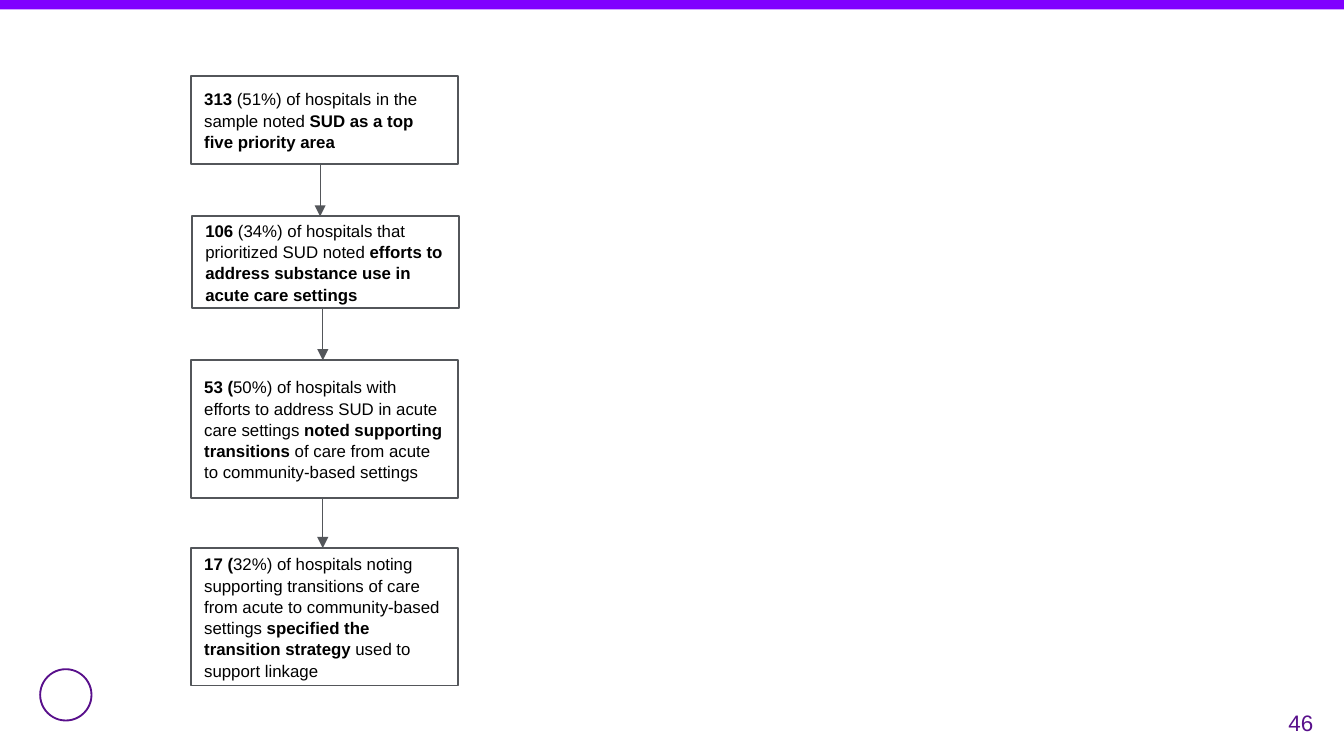
import pptx
import pptx.dml.color
import pptx.enum.shapes
import pptx.enum.text
import pptx.oxml
import pptx.oxml.ns
import pptx.util
from dataclasses import dataclass
from typing import Optional

Cm = pptx.util.Cm
Pt = pptx.util.Pt
RGBColor = pptx.dml.color.RGBColor
MSO_SHAPE = pptx.enum.shapes.MSO_SHAPE
MSO_ANCHOR = pptx.enum.text.MSO_ANCHOR
PP_ALIGN = pptx.enum.text.PP_ALIGN

BAR_VIOLET = RGBColor(0x80, 0x00, 0xFF)
DEEP_PURPLE = RGBColor(0x58, 0x0F, 0x8B)
OUTLINE_GREY = RGBColor(0x53, 0x56, 0x5A)
BLACK = RGBColor(0x00, 0x00, 0x00)

BOX_WIDTH = 5.05


@dataclass
class Step:
    """A flowchart box; its runs alternate bold and regular, bold first."""
    left: float
    top: float
    height: float
    runs: tuple[str, ...]
    arrow_x: Optional[float] = None  # arrow leading to the next box

    @property
    def bottom(self) -> float:
        return self.top + self.height


STEPS = [
    Step(3.61, 1.43, 1.67,
         ("313", " (51%) of hospitals in the sample noted ",
          "SUD as a top five priority area"), 6.05),
    Step(3.63, 4.09, 1.73,
         ("106", " (34%) of hospitals that prioritized SUD noted ",
          "efforts to address substance use in acute care settings"), 6.1),
    Step(3.61, 6.81, 2.6,
         ("53 (", "50%) of hospitals with efforts to address SUD in acute care settings ",
          "noted supporting transitions ",
          "of care from acute to community-based settings"), 6.1),
    Step(3.61, 10.36, 2.6,
         ("17 (", "32%) of hospitals noting supporting transitions of care "
          "from acute to community-based settings ",
          "specified the transition strategy", " used to support linkage")),
]


def add_plain_shape(slide, kind, left: float, top: float, width: float, height: float,
                    fill: Optional[RGBColor] = None, line: Optional[RGBColor] = None):
    shape = slide.shapes.add_shape(kind, Cm(left), Cm(top), Cm(width), Cm(height))
    shape.shadow.inherit = False
    if fill is None:
        shape.fill.background()
    else:
        shape.fill.solid()
        shape.fill.fore_color.rgb = fill
    if line is None:
        shape.line.fill.background()
    else:
        shape.line.color.rgb = line
        shape.line.width = Pt(1)
    return shape


def add_run(paragraph, text: str, size: float, color: RGBColor, bold: bool = False) -> None:
    run = paragraph.add_run()
    run.text = text
    font_format = {"name": "Arial", "size": Pt(size), "bold": bold}
    for attribute, value in font_format.items():
        setattr(run.font, attribute, value)
    run.font.color.rgb = color


def add_step(slide, step: Step) -> None:
    shape = add_plain_shape(slide, MSO_SHAPE.RECTANGLE, step.left, step.top,
                            BOX_WIDTH, step.height, line=OUTLINE_GREY)
    text_frame = shape.text_frame
    text_frame.word_wrap = True
    text_frame.vertical_anchor = MSO_ANCHOR.MIDDLE
    paragraph = text_frame.paragraphs[0]
    paragraph.alignment = PP_ALIGN.LEFT
    paragraph.line_spacing = 1.05
    for index, text in enumerate(step.runs):
        add_run(paragraph, text, 9, BLACK, bold=index % 2 == 0)


def add_arrow(slide, x: float, top: float, bottom: float) -> None:
    connector = slide.shapes.add_connector(
        pptx.enum.shapes.MSO_CONNECTOR.STRAIGHT, Cm(x), Cm(top), Cm(x), Cm(bottom))
    connector.line.color.rgb = OUTLINE_GREY
    connector.line.width = Pt(0.5)
    arrowhead = pptx.oxml.parse_xml(
        f'<a:tailEnd {pptx.oxml.ns.nsdecls("a")} type="triangle"/>')
    connector.line._get_or_add_ln().append(arrowhead)
    no_effects = pptx.oxml.parse_xml(f'<a:effectLst {pptx.oxml.ns.nsdecls("a")}/>')
    connector._element.spPr.append(no_effects)


def add_slide_number(slide, number: str) -> None:
    text_frame = slide.shapes.add_textbox(
        Cm(23.55), Cm(12.95), Cm(1.52), Cm(1.09 * 1.29)).text_frame
    frame_format = {"word_wrap": True, "vertical_anchor": MSO_ANCHOR.MIDDLE}
    for side in ("left", "right", "top", "bottom"):
        frame_format[f"margin_{side}"] = Cm(0.25)
    for attribute, value in frame_format.items():
        setattr(text_frame, attribute, value)
    paragraph = text_frame.paragraphs[0]
    paragraph.alignment = PP_ALIGN.RIGHT
    add_run(paragraph, number, 12, DEEP_PURPLE)


def main() -> None:
    presentation = pptx.Presentation()
    presentation.slide_width = Cm(25.4)
    presentation.slide_height = Cm(14.29)
    slide = presentation.slides.add_slide(presentation.slide_layouts[6])

    # Top bar, emblem and slide number
    add_plain_shape(slide, MSO_SHAPE.RECTANGLE, 0, 0, 25.4, 0.18, fill=BAR_VIOLET)
    add_plain_shape(slide, MSO_SHAPE.OVAL, 0.76, 12.65, 0.97, 0.97, line=DEEP_PURPLE)
    add_slide_number(slide, "46")

    # Flowchart
    for step in STEPS:
        add_step(slide, step)
    for step, following in zip(STEPS, STEPS[1:]):
        add_arrow(slide, step.arrow_x, step.bottom, following.top)

    presentation.save("out.pptx")


if __name__ == "__main__":
    main()
